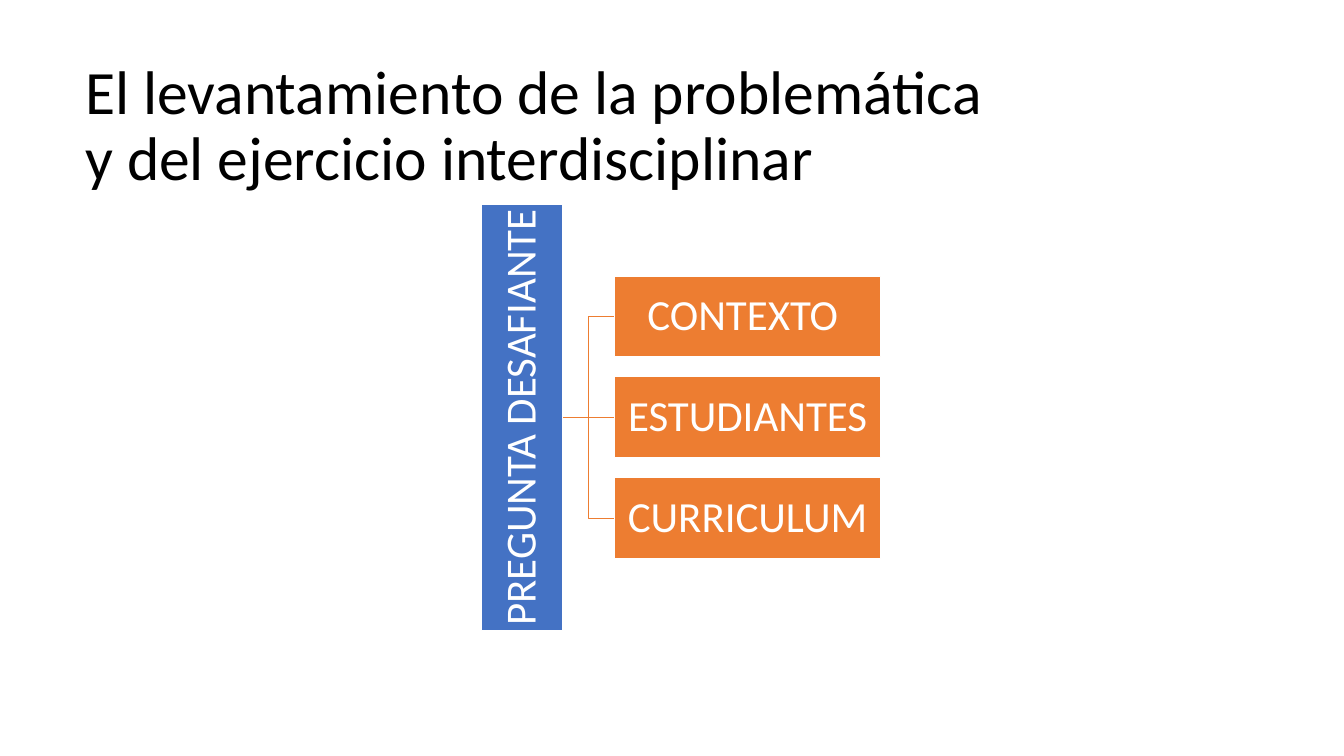
from dataclasses import dataclass

from lxml.etree import SubElement
from pptx import Presentation
from pptx.dml.color import RGBColor
from pptx.enum.shapes import MSO_CONNECTOR, MSO_SHAPE
from pptx.enum.text import MSO_ANCHOR, PP_ALIGN
from pptx.oxml.ns import qn
from pptx.slide import Slide
from pptx.text.text import TextFrame
from pptx.util import Emu, Pt

EMU_PER_PX = 9144
COLORS = {"black": "000000", "white": "FFFFFF", "blue": "4472C4", "orange": "ED7D31"}

BAR_LENGTH, BOX_WIDTH, BOX_HEIGHT = 633, 395, 120
BAR_CENTER_X, CENTER_Y = 776, 621
BOX_LEFT, BOX_PITCH = 915, 150
TOPICS = ["CONTEXTO ", "ESTUDIANTES", "CURRICULUM"]


@dataclass(frozen=True)
class Block:
    text: str
    left: int
    top: int
    width: int
    height: int
    color: str
    rotation: int = 0


def px(length: int) -> Emu:
    return Emu(length * EMU_PER_PX)


def color(name: str) -> RGBColor:
    return RGBColor.from_string(COLORS[name])


def write_text(frame: TextFrame, text: str, size: int, color_name: str,
               alignment: PP_ALIGN, margins: tuple[int, int]) -> None:
    horizontal, vertical = map(px, margins)
    frame_format = {
        "word_wrap": True,
        "vertical_anchor": MSO_ANCHOR.MIDDLE,
        "margin_left": horizontal,
        "margin_right": horizontal,
        "margin_top": vertical,
        "margin_bottom": vertical,
    }
    for name, value in frame_format.items():
        setattr(frame, name, value)
    paragraph = frame.paragraphs[0]
    paragraph.text = text
    for name, value in {"alignment": alignment, "line_spacing": 0.9}.items():
        setattr(paragraph, name, value)
    for run in paragraph.runs:
        for name, value in {"name": "Calibri", "size": Pt(size)}.items():
            setattr(run.font, name, value)
        run.font.color.rgb = color(color_name)


def add_title(slide: Slide, text: str) -> None:
    shape = slide.shapes.add_textbox(px(117), px(81), px(1421), px(217))
    write_text(shape.text_frame, text, 66, "black", PP_ALIGN.LEFT, (10, 5))


def add_block(slide: Slide, block: Block) -> None:
    shape = slide.shapes.add_shape(
        MSO_SHAPE.RECTANGLE, px(block.left), px(block.top), px(block.width), px(block.height))
    shape.rotation = block.rotation
    shape.shadow.inherit = False
    shape.fill.solid()
    shape.fill.fore_color.rgb = color(block.color)
    shape.line.color.rgb = color("white")
    shape.line.width = Pt(1)
    write_text(shape.text_frame, block.text, 46, "white", PP_ALIGN.CENTER, (3, 3))


def add_branch(slide: Slide, end_y: int) -> None:
    kind = MSO_CONNECTOR.STRAIGHT if end_y == CENTER_Y else MSO_CONNECTOR.ELBOW
    connector = slide.shapes.add_connector(
        kind, px(BAR_CENTER_X + BOX_HEIGHT // 2), px(CENTER_Y), px(BOX_LEFT), px(end_y))
    connector.line.color.rgb = color("orange")
    connector.line.width = Pt(1)
    SubElement(connector._element.spPr, qn("a:effectLst"))


def main() -> None:
    presentation = Presentation()
    presentation.slide_width, presentation.slide_height = px(2000), px(1125)
    slide = presentation.slides.add_slide(presentation.slide_layouts[6])
    add_title(slide, "El levantamiento de la problemática\vy del ejercicio interdisciplinar")

    middle = len(TOPICS) // 2
    centers = [CENTER_Y + (index - middle) * BOX_PITCH for index in range(len(TOPICS))]
    for center in centers:
        add_branch(slide, center)
    bar = Block("PREGUNTA DESAFIANTE", BAR_CENTER_X - BAR_LENGTH // 2,
                CENTER_Y - BOX_HEIGHT // 2, BAR_LENGTH, BOX_HEIGHT, "blue", 270)
    boxes = [Block(topic, BOX_LEFT, center - BOX_HEIGHT // 2, BOX_WIDTH, BOX_HEIGHT, "orange")
             for topic, center in zip(TOPICS, centers)]
    for block in [bar, *boxes]:
        add_block(slide, block)
    presentation.save("out.pptx")


if __name__ == "__main__":
    main()
